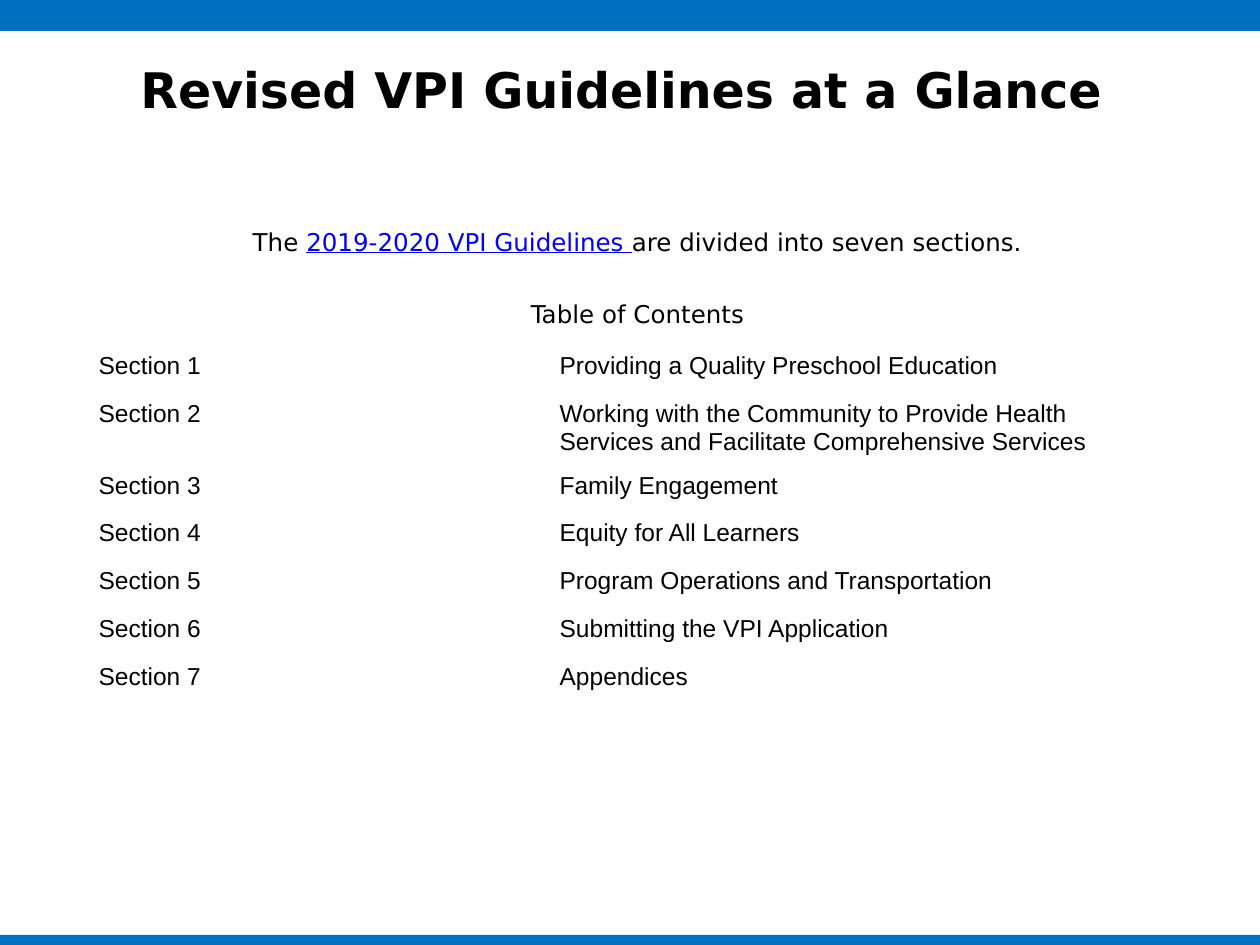
from pptx import Presentation
from pptx.dml.color import RGBColor
from pptx.enum.shapes import MSO_SHAPE as Shape
from pptx.enum.text import MSO_ANCHOR as Anchor, PP_ALIGN as Align
from pptx.util import Emu, Pt

BLUE = RGBColor(0x00, 0x70, 0xC0)
LINK = RGBColor(0x00, 0x00, 0xFF)
BLACK = RGBColor(0x00, 0x00, 0x00)
SANS = "DejaVu Sans"


def px(*sizes):
    return [Emu(round(n * 914400 / 126)) for n in sizes]


def add_run(para, text, face, size, color=BLACK):
    run = para.add_run()
    run.text = text
    run.font.name = face
    run.font.size = Pt(size)
    run.font.color.rgb = color
    return run


deck = Presentation()
deck.slide_width, deck.slide_height = px(1260, 945)
slide = deck.slides.add_slide(deck.slide_layouts[6])
shapes = slide.shapes

for top, height in [(935, 10), (0, 31)]:
    bar = shapes.add_shape(Shape.RECTANGLE, *px(0, top, 1260, height))
    bar.shadow.inherit = False
    bar.fill.solid()
    bar.fill.fore_color.rgb = BLUE
    bar.line.fill.background()

title = shapes.add_textbox(*px(54, 38, 1134, 101)).text_frame
title.word_wrap = True
title.vertical_anchor = Anchor.MIDDLE
head = title.paragraphs[0]
head.alignment = Align.CENTER
add_run(head, "Revised VPI Guidelines at a Glance", SANS, 28).font.bold = True

body = shapes.add_textbox(*px(78, 221, 1119, 120)).text_frame
body.word_wrap = True
intro = body.paragraphs[0]
intro.alignment = Align.CENTER
add_run(intro, "The ", SANS, 14)
add_run(intro, "2019-2020 VPI Guidelines ", SANS, 14, LINK).font.underline = True
add_run(intro, "are divided into seven sections.", SANS, 14)
label = body.add_paragraph()
label.alignment = Align.CENTER
label.space_before = Pt(24)
add_run(label, "Table of Contents", SANS, 14)

topics = [
    "Providing a Quality Preschool Education",
    "Working with the Community to Provide Health Services and Facilitate Comprehensive Services",
    "Family Engagement",
    "Equity for All Learners",
    "Program Operations and Transportation",
    "Submitting the VPI Application",
    "Appendices",
]
count = len(topics)
table = shapes.add_table(count, 2, *px(86, 346, 1082, 48 * count)).table
table.first_row = False
table.horz_banding = False
for col, width in zip(table.columns, px(461, 621)):
    col.width = width
for num, topic in enumerate(topics):
    table.rows[num].height = px(48)[0]
    for cell, text in zip(table.rows[num].cells, [f"Section {num + 1}", topic]):
        cell.fill.background()
        add_run(cell.text_frame.paragraphs[0], text, "Arial", 14)

deck.save("out.pptx")
